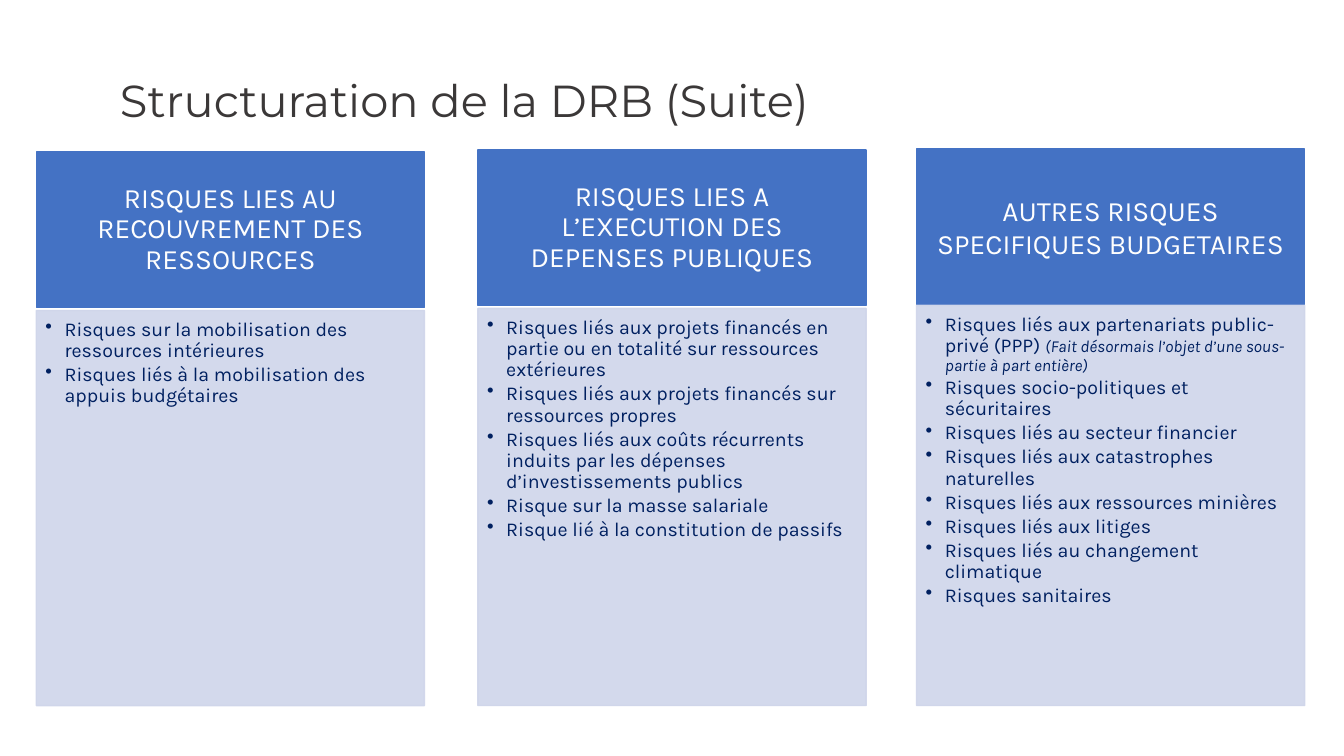
from lxml.etree import SubElement
from pptx import Presentation
from pptx.dml.color import RGBColor
from pptx.enum.shapes import MSO_SHAPE as Shape
from pptx.enum.text import MSO_ANCHOR as Anchor, MSO_AUTO_SIZE as AutoSize, PP_ALIGN as Align
from pptx.oxml.ns import qn
from pptx.util import Inches, Pt

BLUE, PALE, NAVY, WHITE, GREY = "4472C4", "CFD5EA", "002060", "FEFEFE", "3B3838"
COLUMN_WIDTH, HEADER_HEIGHT, COLUMN_BOTTOM = 3.85, 1.54, 7
BULLET_INDENT = 0.19

COLUMNS = [
    (0.36, 1.51, 3.08, 0.9, "RISQUES LIES AU RECOUVREMENT DES RESSOURCES", [
        ["Risques sur la mobilisation des ressources intérieures"],
        ["Risques liés à la mobilisation des appuis budgétaires"],
    ]),
    (4.74, 1.49, 3.06, 0.9, "RISQUES LIES A L’EXECUTION DES DEPENSES PUBLIQUES", [
        ["Risques liés aux projets financés en partie ou en totalité sur ressources extérieures"],
        ["Risques liés aux projets financés sur ressources propres"],
        ["Risques liés aux coûts récurrents induits par les dépenses d’investissements publics"],
        ["Risque sur la masse salariale"],
        ["Risque lié à la constitution de passifs"],
    ]),
    (9.09, 1.48, 3.03, 1.0, "AUTRES RISQUES SPECIFIQUES BUDGETAIRES", [
        ["Risques liés aux partenariats public-privé (PPP) ",
         "(Fait désormais l’objet d’une sous-partie à part entière)"],
        ["Risques socio-politiques et sécuritaires"],
        ["Risques liés au secteur financier"],
        ["Risques liés aux catastrophes naturelles"],
        ["Risques liés aux ressources minières"],
        ["Risques liés aux litiges"],
        ["Risques liés au changement climatique"],
        ["Risques sanitaires"],
    ]),
]


def color(value):
    return RGBColor.from_string(value)


def add_span(para, text, size, tint, font="Karla", italic=False):
    span = para.add_run()
    span.text = text
    span.font.name = font
    span.font.size = Pt(size)
    span.font.italic = italic
    span.font.color.rgb = color(tint)


def set_frame(frame, anchor, left, top, right, bottom):
    frame.word_wrap = True
    frame.auto_size = AutoSize.NONE
    frame.vertical_anchor = anchor
    frame.margin_left, frame.margin_top = Inches(left), Inches(top)
    frame.margin_right, frame.margin_bottom = Inches(right), Inches(bottom)


def add_panel(page, left, top, height, tint, opacity=100):
    panel = page.shapes.add_shape(
        Shape.RECTANGLE, Inches(left), Inches(top), Inches(COLUMN_WIDTH), Inches(height))
    panel.shadow.inherit = False
    panel.fill.solid()
    panel.fill.fore_color.rgb = color(tint)
    panel.line.color.rgb = color(tint)
    panel.line.width = Pt(1)
    if opacity < 100:
        for tone in panel._element.spPr.iter(qn("a:srgbClr")):
            SubElement(tone, qn("a:alpha"), val=str(opacity * 1000))
    return panel


def add_bullet(para):
    props = para._p.get_or_add_pPr()
    props.set("marL", str(Inches(BULLET_INDENT)))
    props.set("indent", str(-Inches(BULLET_INDENT)))
    SubElement(props, qn("a:buChar"), char="•")


def add_header(page, left, top, spacing, text):
    frame = add_panel(page, left, top, HEADER_HEIGHT, BLUE).text_frame
    set_frame(frame, Anchor.MIDDLE, 0.16, 0.09, 0.16, 0.09)
    para = frame.paragraphs[0]
    para.alignment = Align.CENTER
    para.line_spacing = spacing
    add_span(para, text, 20, WHITE)


def add_risk_list(page, left, top, risks):
    frame = add_panel(page, left, top, COLUMN_BOTTOM - top, PALE, 90).text_frame
    set_frame(frame, Anchor.TOP, 0.09, 0.09, 0.12, 0.14)
    for index, (risk, *remarks) in enumerate(risks):
        para = frame.add_paragraph() if index else frame.paragraphs[0]
        add_bullet(para)
        para.level = 1
        para.alignment = Align.LEFT
        para.line_spacing = 0.9
        para.space_after = Pt(2)
        add_span(para, risk, 14, NAVY)
        for remark in remarks:
            add_span(para, remark, 12, NAVY, italic=True)


def add_column(page, left, top, list_top, spacing, heading, risks):
    add_header(page, left, top, spacing, heading)
    add_risk_list(page, left, list_top, risks)


def add_title(page, left, top, width, height, text):
    title = page.shapes.title
    title.left, title.top = Inches(left), Inches(top)
    title.width, title.height = Inches(width), Inches(height)
    set_frame(title.text_frame, Anchor.MIDDLE, 0, 0, 0, 0)
    para = title.text_frame.paragraphs[0]
    para.alignment = Align.LEFT
    para.line_spacing = 0.9
    add_span(para, text, 32, GREY, "Montserrat")


def main():
    deck = Presentation()
    deck.slide_width, deck.slide_height = Inches(13.33), Inches(7.5)
    page = deck.slides.add_slide(deck.slide_layouts[5])
    add_title(page, 1.19, 0.39, 11.14, 1.26, "Structuration de la DRB (Suite)")
    for column in COLUMNS:
        add_column(page, *column)
    deck.save("out.pptx")


if __name__ == "__main__":
    main()
